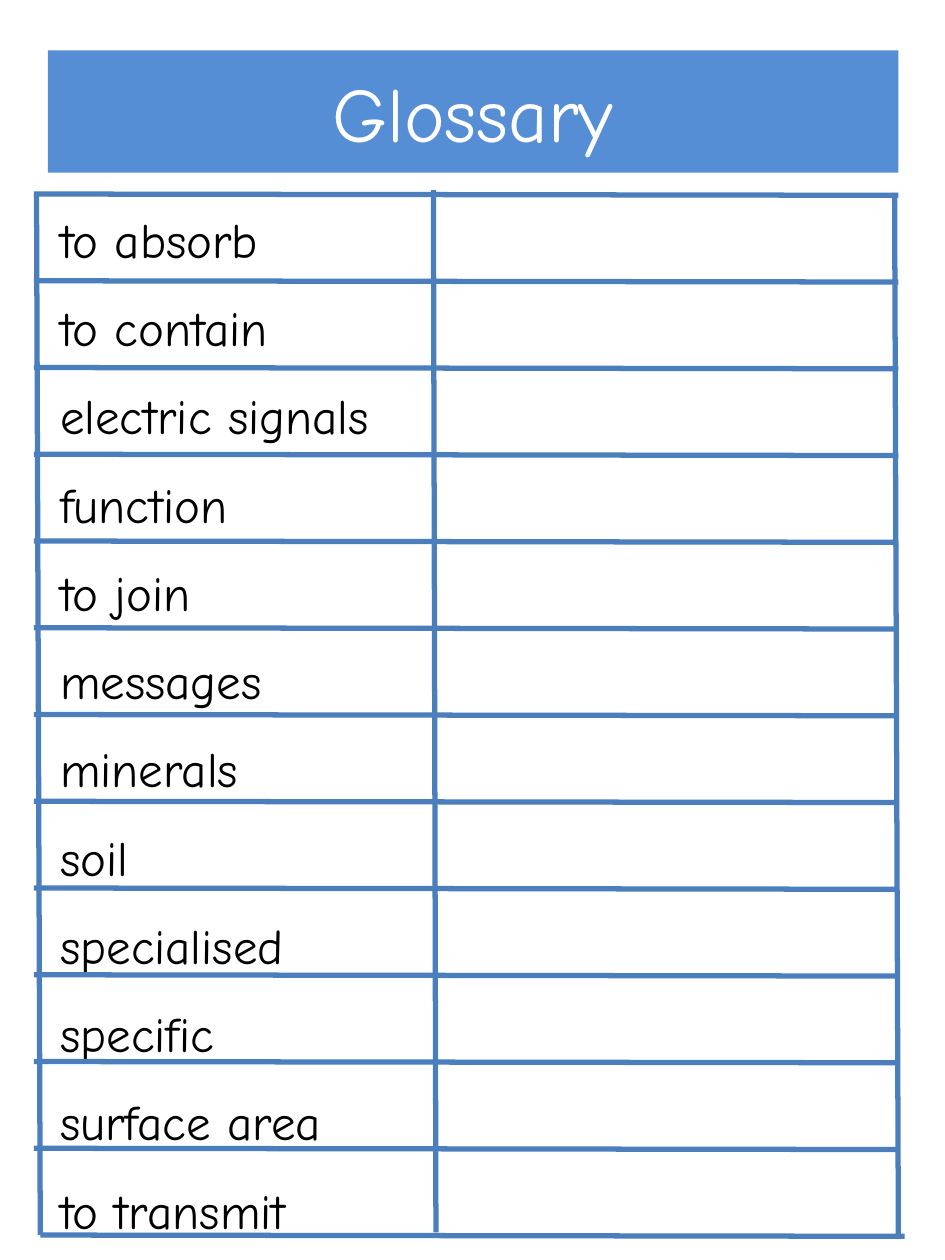
from lxml import etree
from pptx import Presentation
from pptx.dml.color import RGBColor
from pptx.enum.shapes import MSO_CONNECTOR
from pptx.enum.text import MSO_ANCHOR, MSO_AUTO_SIZE, PP_ALIGN
from pptx.oxml.ns import qn
from pptx.util import Inches, Pt

STRAIGHT = MSO_CONNECTOR.STRAIGHT
MIDDLE = MSO_ANCHOR.MIDDLE
GROW = MSO_AUTO_SIZE.SHAPE_TO_FIT_TEXT
CENTER, JUSTIFY = PP_ALIGN.CENTER, PP_ALIGN.JUSTIFY

FONT = "Comic Neue"
COLORS = {"banner": "558ED5", "rule": "4B7EBC", "title": "FFFFFF", "term": "000000"}

TERMS = [
    "to absorb", "to contain", "electric signals", "function", "to join", "messages",
    "minerals", "soil", "specialised ", "specific", "surface area", "to transmit",
]

GRID_LEFT, GRID_RIGHT, GRID_TOP = 0.27, 7.13, 1.54
ROW_HEIGHT = 0.6885
# Top and bottom ends of the slightly slanted column rules
COLUMN_RULES = [(0.29, 1.54, 0.32, 9.8), (3.44, 1.51, 3.46, 9.78), (7.1, 1.53, 7.13, 9.8)]


def color(name):
    return RGBColor.from_string(COLORS[name])


def style_paragraph(paragraph, size, color_name, alignment):
    paragraph.alignment = alignment
    paragraph.font.name = FONT
    paragraph.font.size = Pt(size)
    paragraph.font.color.rgb = color(color_name)


def add_banner(slide):
    banner = slide.shapes.title
    banner.left, banner.top = Inches(0.38), Inches(0.4)
    banner.width, banner.height = Inches(6.75), Inches(0.97)
    banner.fill.solid()
    banner.fill.fore_color.rgb = color("banner")
    frame = banner.text_frame
    frame.text = "Glossary"
    frame.vertical_anchor = MIDDLE
    style_paragraph(frame.paragraphs[0], 44, "title", CENTER)


def add_terms(slide):
    term_list = slide.shapes.add_textbox(
        Inches(0.38), Inches(1.38), Inches(6.5), Inches(10.06))
    frame = term_list.text_frame
    frame.word_wrap = True
    frame.auto_size = GROW
    frame.text = "\n".join(TERMS)
    for paragraph in frame.paragraphs:
        style_paragraph(paragraph, 28, "term", JUSTIFY)
        paragraph.line_spacing = 1.5


def add_rule(slide, x1, y1, x2, y2):
    rule = slide.shapes.add_connector(
        STRAIGHT, Inches(x1), Inches(y1), Inches(x2), Inches(y2))
    rule.line.color.rgb = color("rule")
    rule.line.width = Pt(3)
    etree.SubElement(rule._element.spPr, qn("a:effectLst"))


def add_grid(slide):
    # Row rules, the last one shifted to the right
    for row in range(len(TERMS) + 1):
        y = GRID_TOP + row * ROW_HEIGHT
        shift = 0.05 if row == len(TERMS) else 0
        add_rule(slide, GRID_LEFT + shift, y, GRID_RIGHT + shift, y + 0.01)
    # Column rules
    for ends in COLUMN_RULES:
        add_rule(slide, *ends)


def main():
    deck = Presentation()
    deck.slide_width, deck.slide_height = Inches(7.5), Inches(10)
    slide = deck.slides.add_slide(deck.slide_layouts[5])
    add_banner(slide)
    add_terms(slide)
    add_grid(slide)
    deck.save("out.pptx")


if __name__ == "__main__":
    main()
